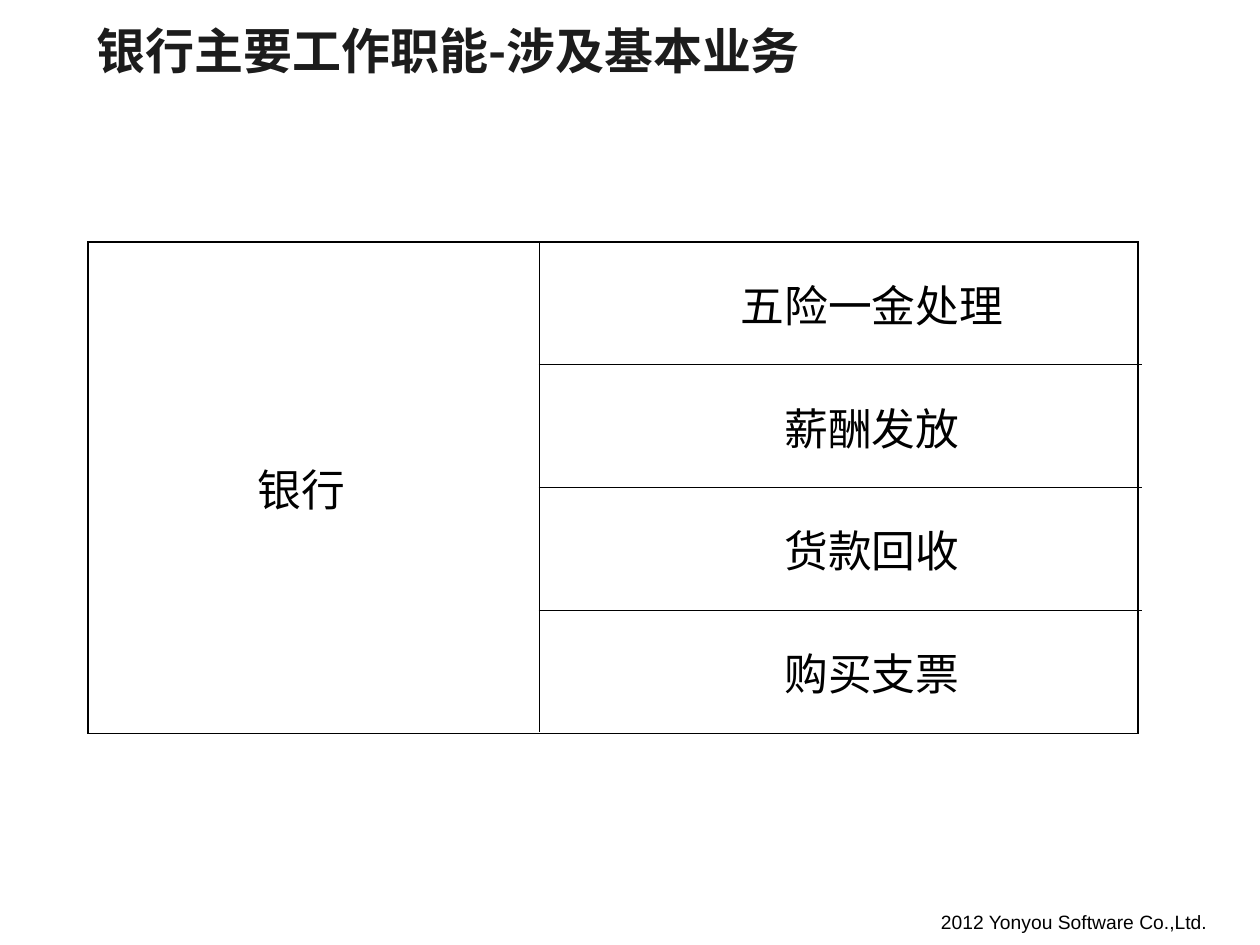
import pptx
import pptx.dml.color
import pptx.enum.text
import pptx.oxml
import pptx.oxml.ns
import pptx.util
from pptx.util import Inches

BLACK, WHITE, TITLE_COLOR = "000000", "FFFFFF", "1C1C1C"
DUTIES = ["五险一金处理", "薪酬发放", "货款回收", "购买支票"]
TABLE_TOP, TABLE_HEIGHT = 1.92, 3.9


def rgb(value):
    """Return the colour for a hex string."""
    return pptx.dml.color.RGBColor.from_string(value)


def add_run(paragraph, text, size, font_name, color, bold=False):
    """Add one formatted run to a paragraph."""
    run = paragraph.add_run()
    run.text = text
    run.font.size = pptx.util.Pt(size)
    run.font.name = font_name
    run.font.bold = bold
    run.font.color.rgb = rgb(color)
    if not text.isascii():
        properties = run.font._element
        east_asian = pptx.oxml.parse_xml(
            f'<a:ea {pptx.oxml.ns.nsdecls("a")} typeface="Noto Sans CJK SC"/>')
        properties.find(pptx.oxml.ns.qn("a:latin")).addnext(east_asian)


def add_text(slide, left, top, width, height, text, size, font_name, color, bold=False, wrap=True):
    """Add a single-line text box."""
    shape = slide.shapes.add_textbox(Inches(left), Inches(top), Inches(width), Inches(height))
    frame = shape.text_frame
    frame.word_wrap = wrap
    frame.vertical_anchor = pptx.enum.text.MSO_ANCHOR.MIDDLE
    add_run(frame.paragraphs[0], text, size, font_name, color, bold)


def set_borders(cell, left, right, top, bottom):
    """Draw the four one-point borders of a cell in the given colours."""
    properties = cell._tc.get_or_add_tcPr()
    for side, color in zip("LRTB", (left, right, top, bottom)):
        properties.append(pptx.oxml.parse_xml(
            f'<a:ln{side} {pptx.oxml.ns.nsdecls("a")} w="12700"><a:solidFill>'
            f'<a:srgbClr val="{color}"/></a:solidFill></a:ln{side}>'))


def add_table(slide, left, widths, row_count):
    """Add an unstyled table with equal rows."""
    shape = slide.shapes.add_table(
        row_count, len(widths), Inches(left), Inches(TABLE_TOP),
        Inches(sum(widths)), Inches(TABLE_HEIGHT))
    table = shape.table
    table.first_row = table.horz_banding = False
    for column, width in zip(table.columns, widths):
        column.width = Inches(width)
    return table


def fill_cell(cell, text):
    """Write centred text into a cell."""
    cell.vertical_anchor = pptx.enum.text.MSO_ANCHOR.MIDDLE
    paragraph = cell.text_frame.paragraphs[0]
    paragraph.alignment = pptx.enum.text.PP_ALIGN.CENTER
    add_run(paragraph, text, 25, "Calibri", BLACK)


def add_duties_table(slide):
    """Add the table that lists the duties of the bank."""
    table = add_table(slide, 0.5, [3.78, 0.5, 4.28], len(DUTIES))
    last = len(DUTIES) - 1
    for row, duty in enumerate(DUTIES):
        top = BLACK if row > 0 else WHITE
        bottom = BLACK if row < last else WHITE
        bank, spacer, duty_cell = (table.cell(row, column) for column in range(3))
        set_borders(bank, WHITE, BLACK, WHITE, WHITE)
        set_borders(spacer, BLACK, WHITE, top, bottom)
        set_borders(duty_cell, WHITE, WHITE, top, bottom)
        for cell in (bank, spacer, duty_cell):
            cell.fill.solid()
            cell.fill.fore_color.rgb = rgb(WHITE)
        fill_cell(duty_cell, duty)
    table.cell(0, 0).merge(table.cell(last, 0))
    fill_cell(table.cell(0, 0), "银行")


def add_frame_table(slide):
    """Add the one-cell table that frames the duties."""
    cell = add_table(slide, 0.7, [8.33], 1).cell(0, 0)
    set_borders(cell, BLACK, BLACK, BLACK, BLACK)
    cell.fill.background()


def main():
    """Build and save the slide."""
    presentation = pptx.Presentation()
    presentation.slide_width, presentation.slide_height = Inches(10), Inches(7.5)
    slide = presentation.slides.add_slide(presentation.slide_layouts[6])
    add_text(slide, 7.37, 7.17, 2.33, 0.29, "2012 Yonyou Software Co.,Ltd.",
             11, "Arial", BLACK, wrap=False)
    add_text(slide, 0.67, 0.08, 7.67, 0.64, "银行主要工作职能-涉及基本业务",
             28, "Noto Sans CJK SC", TITLE_COLOR, bold=True)
    add_duties_table(slide)
    add_frame_table(slide)
    presentation.save("out.pptx")


if __name__ == "__main__":
    main()
